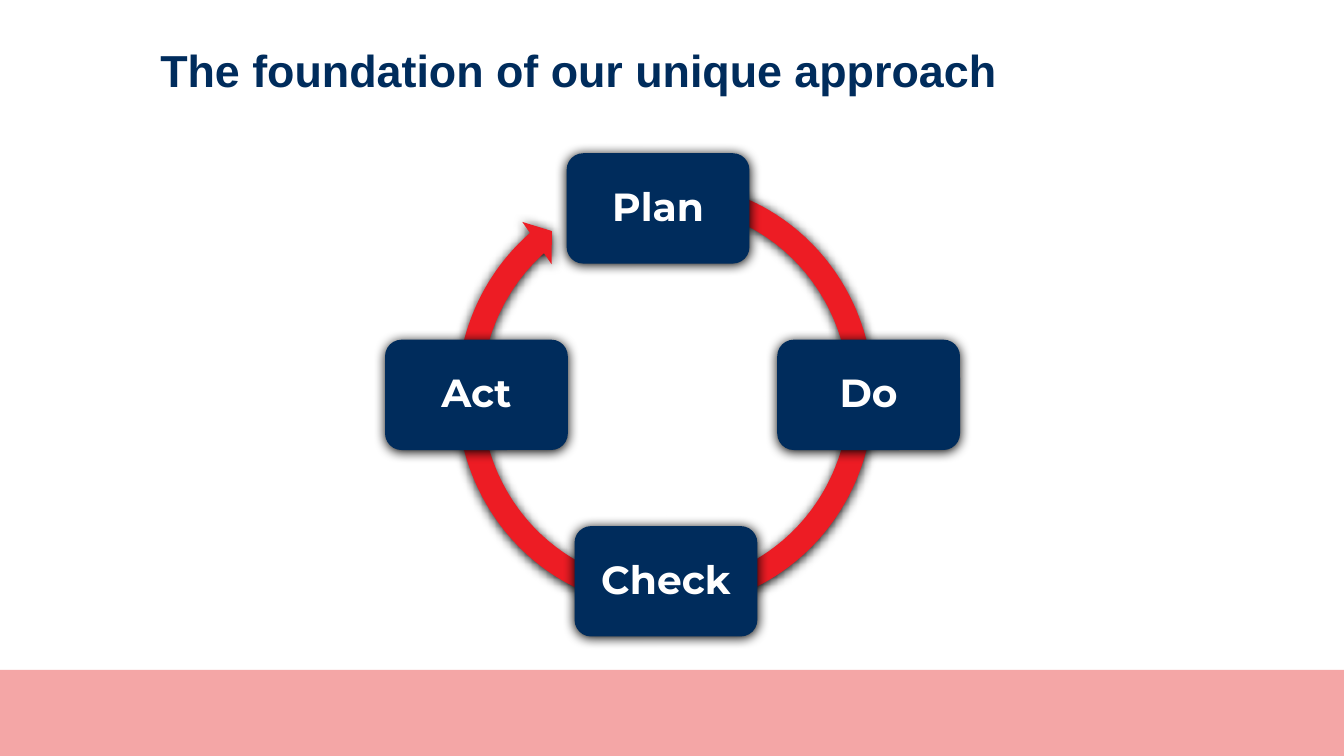
"""Build a slide showing the Plan, Do, Check, Act cycle."""
from dataclasses import dataclass

import lxml.etree
import pptx
import pptx.dml.color
import pptx.enum.shapes
import pptx.enum.text
import pptx.oxml.ns
import pptx.shapes.autoshape
import pptx.slide
import pptx.text.text
import pptx.util

NAVY = pptx.dml.color.RGBColor(0x00, 0x2C, 0x5C)
RED = pptx.dml.color.RGBColor(0xED, 0x1C, 0x24)
PINK = pptx.dml.color.RGBColor(0xF4, 0xA6, 0xA6)
WHITE = pptx.dml.color.RGBColor(0xFF, 0xFF, 0xFF)
SHAPES = pptx.enum.shapes.MSO_SHAPE

SLIDE_WIDTH = pptx.util.Inches(13.33)
SLIDE_HEIGHT = pptx.util.Inches(7.5)

STEP_WIDTH, STEP_HEIGHT = 13.6, 14.6
FIRST_ROW, ROW_PITCH = 20.27, 24.66
TITLE_FONT = {"name": "Arial", "size": pptx.util.Pt(32), "bold": True}
STEP_FONT = {"name": "Montserrat", "size": pptx.util.Pt(28), "bold": True}


@dataclass(frozen=True)
class Area:
    left: float
    top: float
    width: float
    height: float

    def lengths(self) -> tuple[int, int, int, int]:
        return (
            round(SLIDE_WIDTH * self.left / 100),
            round(SLIDE_HEIGHT * self.top / 100),
            round(SLIDE_WIDTH * self.width / 100),
            round(SLIDE_HEIGHT * self.height / 100),
        )


@dataclass(frozen=True)
class Step:
    label: str
    left: float
    row: int

    def area(self) -> Area:
        return Area(self.left, FIRST_ROW + self.row * ROW_PITCH, STEP_WIDTH, STEP_HEIGHT)


BAND = Area(0, 88.6, 100, 11.4)
ARROW = Area(33, 22.27, 33, 60)
TITLE = Area(11.93, 5.6, 85.05, 7.2)
ARROW_ADJUSTMENTS = (0.055, 3.307, 137.906, 173.77, 0.058)
STEPS = (
    Step("Plan", 42.16, 0),
    Step("Do", 57.83, 1),
    Step("Check", 42.75, 2),
    Step("Act", 28.65, 1),
)


def add_filled(
    page: pptx.slide.Slide,
    kind: pptx.enum.shapes.MSO_SHAPE,
    area: Area,
    color: pptx.dml.color.RGBColor,
    adjustments: tuple[float, ...] = (),
) -> pptx.shapes.autoshape.Shape:
    shape = page.shapes.add_shape(kind, *area.lengths())
    shape.shadow.inherit = False
    shape.fill.solid()
    shape.fill.fore_color.rgb = color
    shape.line.fill.background()
    for index, value in enumerate(adjustments):
        shape.adjustments[index] = value
    return shape


def add_shadow(shape: pptx.shapes.autoshape.Shape) -> None:
    qn = pptx.oxml.ns.qn
    effects = shape.element.spPr.find(qn("a:effectLst"))
    shadow = lxml.etree.SubElement(effects, qn("a:outerShdw"))
    values = {
        "blurRad": pptx.util.Pt(8.5),
        "dist": pptx.util.Pt(1),
        "dir": 90 * 60000,
        "rotWithShape": 0,
    }
    for name, value in values.items():
        shadow.set(name, str(int(value)))
    lxml.etree.SubElement(shadow, qn("a:srgbClr")).set("val", "000000")


def write(
    frame: pptx.text.text.TextFrame,
    text: str,
    font: dict[str, object],
    color: pptx.dml.color.RGBColor,
    margin: float,
) -> pptx.text.text._Paragraph:
    frame.word_wrap = True
    for side in ("left", "top", "right", "bottom"):
        setattr(frame, f"margin_{side}", pptx.util.Inches(margin))
    para = frame.paragraphs[0]
    span = para.add_run()
    span.text = text
    for name, value in font.items():
        setattr(span.font, name, value)
    span.font.color.rgb = color
    return para


def add_step(page: pptx.slide.Slide, step: Step) -> None:
    box = add_filled(page, SHAPES.ROUNDED_RECTANGLE, step.area(), NAVY, (0.15,))
    add_shadow(box)
    box.text_frame.vertical_anchor = pptx.enum.text.MSO_ANCHOR.MIDDLE
    para = write(box.text_frame, step.label, STEP_FONT, WHITE, 0.1)
    para.alignment = pptx.enum.text.PP_ALIGN.CENTER
    para.line_spacing = 0.9


def main() -> None:
    deck = pptx.Presentation()
    deck.slide_width, deck.slide_height = SLIDE_WIDTH, SLIDE_HEIGHT
    page = deck.slides.add_slide(deck.slide_layouts[6])
    add_filled(page, SHAPES.RECTANGLE, BAND, PINK)
    add_shadow(add_filled(page, SHAPES.CIRCULAR_ARROW, ARROW, RED, ARROW_ADJUSTMENTS))
    title = page.shapes.add_textbox(*TITLE.lengths())
    write(title.text_frame, "The foundation of our unique approach", TITLE_FONT, NAVY, 0)
    for step in STEPS:
        add_step(page, step)
    deck.save("out.pptx")


if __name__ == "__main__":
    main()
